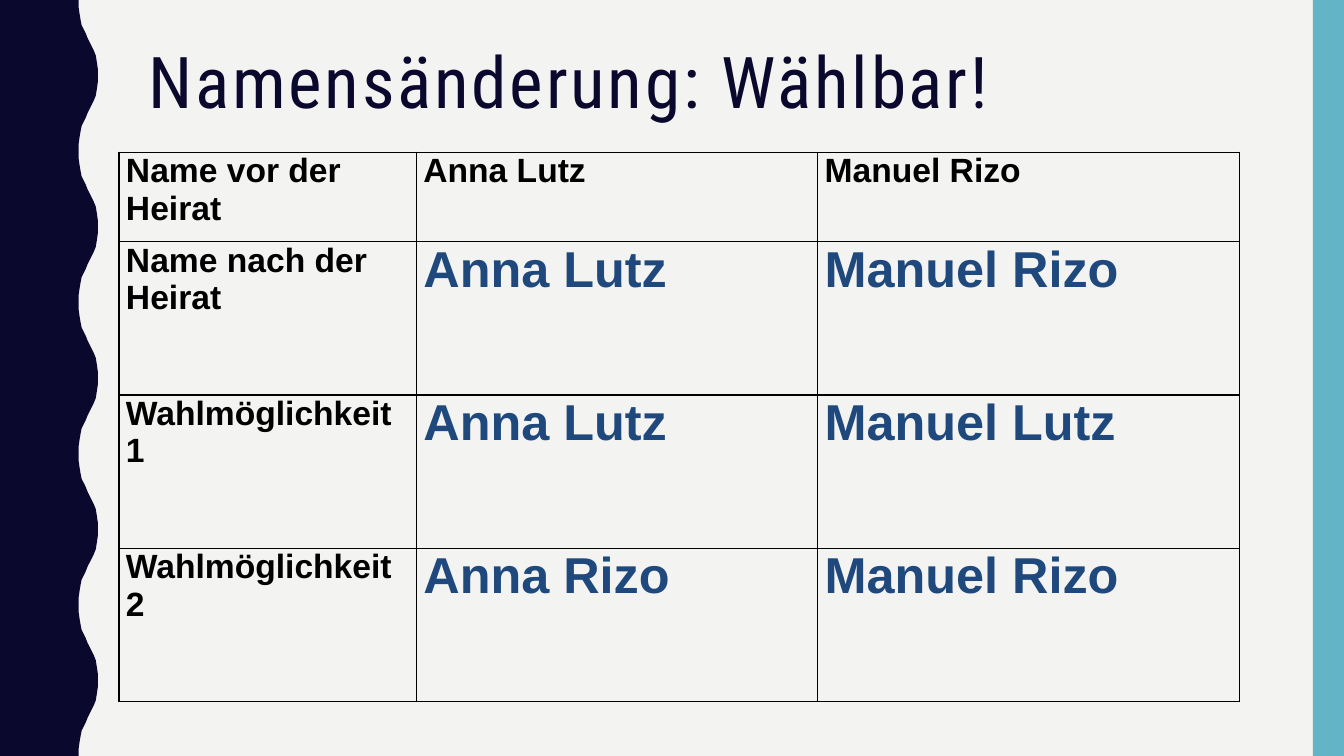
from dataclasses import dataclass

from lxml import etree
from pptx import Presentation
from pptx.dml.color import RGBColor
from pptx.enum import shapes, text
from pptx.oxml import ns
from pptx.util import Inches, Pt


@dataclass(frozen=True)
class Theme:
    background: str = "F3F3F2"
    navy: str = "0B082E"
    teal: str = "62B4C6"
    label: str = "000000"
    choice: str = "1F497D"
    title_font: str = "Roboto Condensed"
    table_font: str = "Arial"
    title_size: float = 51
    label_size: float = 24
    choice_size: float = 36
    tracking: int = 200
    border: float = 1


THEME = Theme()
WIDTH, HEIGHT = 13.33, 7.5
WAVES = 5
HALF_WAVE = [
    (0, 0), (0, 0.07), (0.01, 0.14), (0.02, 0.2), (0.03, 0.25),
    (0.05, 0.29), (0.07, 0.33), (0.09, 0.38), (0.11, 0.42),
    (0.13, 0.46), (0.15, 0.5), (0.17, 0.55), (0.18, 0.61), (0.19, 0.68),
]
COLUMNS = [2.95, 3.98, 4.18]
ROWS = [0.89, 1.52, 1.52, 1.52]
NAMES = [
    ("Name vor der Heirat", "Anna Lutz", "Manuel Rizo"),
    ("Name nach der Heirat", "Anna Lutz", "Manuel Rizo"),
    ("Wahlmöglichkeit 1", "Anna Lutz", "Manuel Lutz"),
    ("Wahlmöglichkeit 2", "Anna Rizo", "Manuel Rizo"),
]


def paint(s, color):
    s.shadow.inherit = False
    s.fill.solid()
    s.fill.fore_color.rgb = RGBColor.from_string(color)
    s.line.fill.background()


def style_font(font, name, size, color, bold=False):
    font.name = name
    font.size = Pt(size)
    font.bold = bold
    font.color.rgb = RGBColor.from_string(color)


def add_wave(slide, left, top, width, height):
    period = height / WAVES
    depth = HALF_WAVE[-1][0]
    trough = left + width - depth
    wave = HALF_WAVE + [(depth, period / 2)]
    wave += [(x, period - y) for x, y in reversed(HALF_WAVE)]
    edge = [(trough + x, top + i * period + y) for i in range(WAVES) for x, y in wave]
    points = edge + [(left, top + height)]
    builder = slide.shapes.build_freeform(Inches(left), Inches(top))
    builder.add_line_segments([(Inches(x), Inches(y)) for x, y in points])
    paint(builder.convert_to_shape(), THEME.navy)


def add_side_bar(slide, left, top, width, height):
    box = map(Inches, (left, top, width, height))
    paint(slide.shapes.add_shape(shapes.MSO_SHAPE.RECTANGLE, *box), THEME.teal)


def add_title(slide, left, top, width, height):
    box = map(Inches, (left, top, width, height))
    tf = slide.shapes.add_textbox(*box).text_frame
    tf.word_wrap = True
    tf.vertical_anchor = text.MSO_ANCHOR.TOP
    tf.text = "Namensänderung: Wählbar!"
    p = tf.paragraphs[0]
    p.line_spacing = 0.9
    r = p.runs[0]
    style_font(r.font, THEME.title_font, THEME.title_size, THEME.navy)
    r.font._element.set("spc", str(THEME.tracking))


def set_borders(cell):
    tc_pr = cell._tc.get_or_add_tcPr()
    for i, side in enumerate(("lnL", "lnR", "lnT", "lnB")):
        line = etree.Element(ns.qn(f"a:{side}"), w=str(Pt(THEME.border)))
        fill = etree.SubElement(line, ns.qn("a:solidFill"))
        etree.SubElement(fill, ns.qn("a:srgbClr"), val=THEME.label)
        tc_pr.insert(i, line)


def fill_cell(cell, name, is_label):
    cell.margin_left = cell.margin_right = Inches(0.07)
    cell.margin_top = cell.margin_bottom = 0
    cell.fill.background()
    set_borders(cell)
    cell.text_frame.text = name
    size, color = (
        (THEME.label_size, THEME.label) if is_label
        else (THEME.choice_size, THEME.choice)
    )
    r = cell.text_frame.paragraphs[0].runs[0]
    style_font(r.font, THEME.table_font, size, color, bold=True)


def add_name_table(slide, left, top, width, height):
    box = map(Inches, (left, top, width, height))
    table = slide.shapes.add_table(len(ROWS), len(COLUMNS), *box).table
    table.first_row = table.horz_banding = False
    for column, size in zip(table.columns, COLUMNS):
        column.width = Inches(size)
    for row, size in zip(table.rows, ROWS):
        row.height = Inches(size)
    for i, names in enumerate(NAMES):
        for j, name in enumerate(names):
            fill_cell(table.cell(i, j), name, i == 0 or j == 0)


def main():
    prs = Presentation()
    prs.slide_width, prs.slide_height = Inches(WIDTH), Inches(HEIGHT)
    slide = prs.slides.add_slide(prs.slide_layouts[6])
    slide.background.fill.solid()
    slide.background.fill.fore_color.rgb = RGBColor.from_string(THEME.background)
    add_wave(slide, 0, 0, 0.97, HEIGHT)
    add_side_bar(slide, WIDTH - 0.31, 0, 0.31, HEIGHT)
    add_title(slide, 1.37, 0.42, 11.13, 1.63)
    add_name_table(slide, 1.18, 1.51, sum(COLUMNS), sum(ROWS))
    prs.save("out.pptx")


if __name__ == "__main__":
    main()
